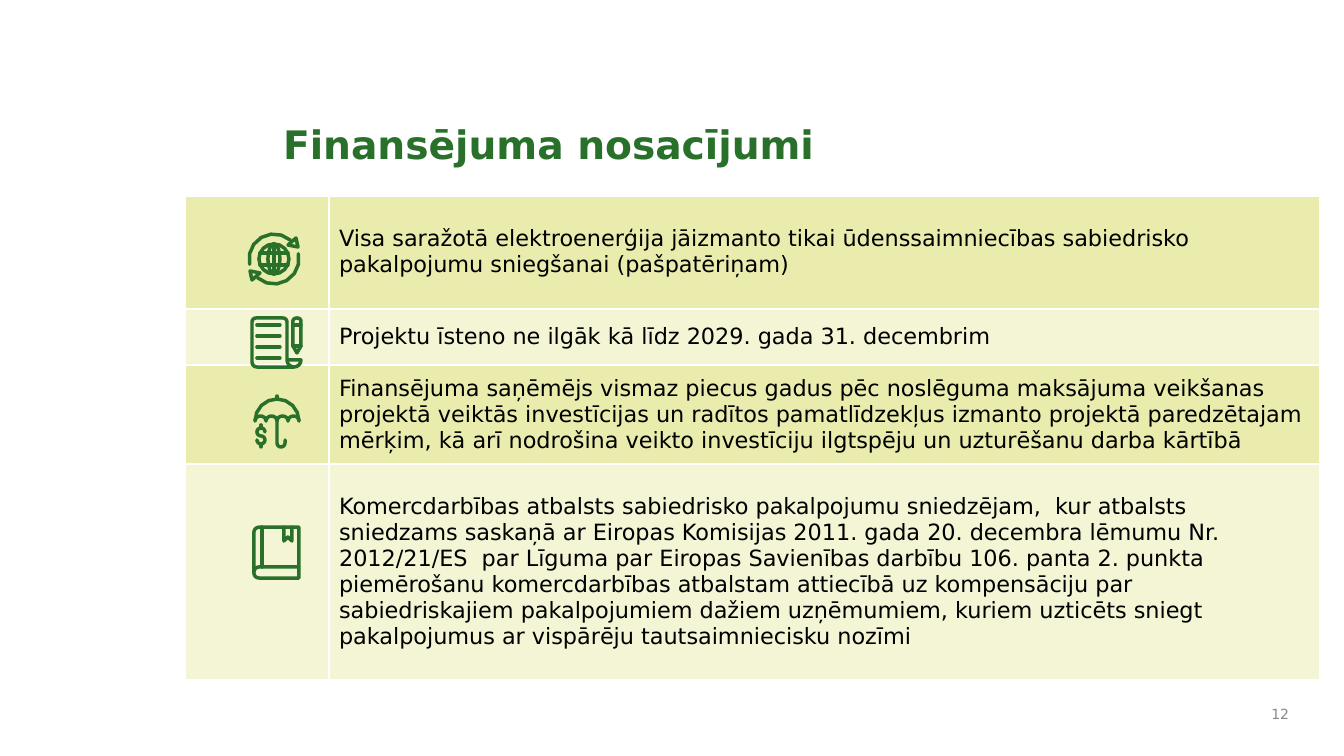
"""Build the slide on funding conditions with its icon table."""
import math

from lxml import etree
from pptx import Presentation
from pptx.dml.color import RGBColor
from pptx.enum.text import MSO_ANCHOR, PP_ALIGN
from pptx.oxml.ns import qn
from pptx.util import Emu, Pt

MIDDLE = MSO_ANCHOR.MIDDLE
LEFT, RIGHT = PP_ALIGN.LEFT, PP_ALIGN.RIGHT
SCALE = 914400 / 100.8
FONT = "DejaVu Sans"
COLORS = {"green": "29702A", "lime": "EAECAD", "black": "000000",
          "grey": "898989", "white": "FFFFFF"}
ROWS = [
    (114, "Visa saražotā elektroenerģija jāizmanto tikai ūdenssaimniecības "
          "sabiedrisko pakalpojumu sniegšanai (pašpatēriņam)"),
    (56, "Projektu īsteno ne ilgāk kā līdz 2029. gada 31. decembrim"),
    (99, "Finansējuma saņēmējs vismaz piecus gadus pēc noslēguma maksājuma "
         "veikšanas projektā veiktās investīcijas un radītos pamatlīdzekļus "
         "izmanto projektā paredzētajam mērķim, kā arī nodrošina veikto "
         "investīciju ilgtspēju un uzturēšanu darba kārtībā"),
    (216, "Komercdarbības atbalsts sabiedrisko pakalpojumu sniedzējam,  kur "
          "atbalsts sniedzams saskaņā ar Eiropas Komisijas 2011. gada 20. "
          "decembra lēmumu Nr. 2012/21/ES  par Līguma par Eiropas Savienības "
          "darbību 106. panta 2. punkta piemērošanu komercdarbības atbalstam "
          "attiecībā uz kompensāciju par sabiedriskajiem pakalpojumiem dažiem "
          "uzņēmumiem, kuriem uzticēts sniegt pakalpojumus ar vispārēju "
          "tautsaimniecisku nozīmi"),
]


def px(value):
    return Emu(round(value * SCALE))


def color(name):
    return RGBColor.from_string(COLORS[name])


def write(tf, text, size, name, align=LEFT, bold=False):
    tf.text = text
    tf.word_wrap = True
    tf.vertical_anchor = MIDDLE
    p = tf.paragraphs[0]
    p.alignment = align
    font = p.runs[0].font
    font.name, font.size, font.bold = FONT, Pt(size), bold
    font.color.rgb = color(name)


def arc(cx, cy, rx, ry, start, end):
    steps = max(3, abs(end - start) // 22)
    angles = [math.radians(start + (end - start) * i / steps)
              for i in range(steps + 1)]
    return [(cx + rx * math.cos(a), cy + ry * math.sin(a)) for a in angles]


def draw_strokes(shapes, *strokes):
    builder = None
    for stroke in strokes:
        points = [(px(x), px(y)) for x, y in stroke]
        if builder is None:
            builder = shapes.build_freeform(*points[0])
        else:
            builder.move_to(*points[0])
        builder.add_line_segments(points[1:], close=False)
    shape = builder.convert_to_shape()
    shape.shadow.inherit = False
    shape.fill.background()
    shape.line.color.rgb = color("green")
    shape.line.width = Pt(2.5)
    shape._element.spPr.get_or_add_ln().set("cap", "rnd")


def draw_globe(shapes):
    cx, cy = 274, 259
    for side, start in ((1, 168), (-1, 348)):
        head = [(22, -21), (24, -12), (14, -14), (22, -21)]
        draw_strokes(shapes, arc(cx, cy, 25, 25, start, start + 143),
                     [(cx + side * x, cy + side * y) for x, y in head])
    parallels = [[(cx - 14, cy + dy), (cx + 14, cy + dy)] for dy in (-6, 6)]
    draw_strokes(shapes, arc(cx, cy, 15, 15, 0, 360), arc(cx, cy, 6, 15, 0, 360),
                 [(cx, cy - 15), (cx, cy + 15)], *parallels)


def draw_scroll(shapes):
    draw_strokes(shapes, [(287, 360)] + arc(283, 322, 4, 4, 0, -90)
                 + arc(256, 322, 4, 4, 270, 180) + arc(257, 362, 5, 5, 180, 90)
                 + arc(294, 360, 7, 7, 90, 0) + arc(294, 360, 7, 7, 180, 90))
    for i in range(4):
        y = 325 + 11 * i
        draw_strokes(shapes, [(257, y), (280, y)])
    bands = [[(293, y), (301, y)] for y in (325, 346)]
    draw_strokes(shapes, [(293, 346)] + arc(297, 321, 4, 3, 180, 360)
                 + [(301, 346), (297, 353), (293, 346)], *bands)


def draw_umbrella(shapes):
    ends = [[(261, y), (261, y + 3)] for y in (425, 444)]
    draw_strokes(shapes, arc(261, 432, 4, 4, 0, -270)
                 + arc(261, 440, 4, 4, -90, 180), *ends)
    scallops = [arc(260.5 + 11 * i, 421, 5.5, 5, 180, 360) for i in range(4)]
    handle = [(277, 421)] + arc(281, 443, 4, 4, 180, 0) + [(285, 440)]
    draw_strokes(shapes, arc(277, 421, 22, 22, 180, 360), *scallops,
                 [(277, 396), (277, 399)], handle)


def draw_book(shapes):
    cover = ([(299, 567), (299, 527)] + arc(260, 532, 6, 5, 270, 180)
             + arc(259, 573, 5, 5, 180, 90) + [(299, 578), (299, 567)]
             + arc(259, 572, 5, 5, 270, 180))
    ribbon = [(284, 527), (284, 541), (288, 537), (292, 541), (292, 527)]
    draw_strokes(shapes, cover, [(262, 527), (262, 567)], ribbon)


def style_cell(cell, top_width, half):
    tcPr = cell._tc.get_or_add_tcPr()
    for side in "LRTB":
        width = top_width if side == "T" else 1
        ln = etree.SubElement(tcPr, qn(f"a:ln{side}"), w=str(Pt(width)))
        fill = etree.SubElement(ln, qn("a:solidFill"))
        etree.SubElement(fill, qn("a:srgbClr"), val=COLORS["white"])
    cell.fill.solid()
    cell.fill.fore_color.rgb = color("lime")
    if half:
        rgb = tcPr.find(qn("a:solidFill")).find(qn("a:srgbClr"))
        etree.SubElement(rgb, qn("a:alpha"), val="50000")


def add_conditions(s):
    height = sum(h for h, _ in ROWS)
    frame = s.shapes.add_table(len(ROWS), 2, px(185), px(195), px(1135), px(height))
    table = frame.table
    table.first_row = table.horz_banding = False
    for column, width in zip(table.columns, (144, 991)):
        column.width = px(width)
    for i, (row_height, text) in enumerate(ROWS):
        table.rows[i].height = px(row_height)
        for cell in table.rows[i].cells:
            style_cell(cell, 1 if i else 3, i % 2 == 1)
        cell = table.cell(i, 1)
        write(cell.text_frame, text, 16, "black")
        cell.vertical_anchor = MIDDLE


def main():
    prs = Presentation()
    prs.slide_width, prs.slide_height = px(1344), px(756)
    s = prs.slides.add_slide(prs.slide_layouts[5])
    title = s.shapes.title
    title.left, title.top, title.width, title.height = map(px, (273, 87, 896, 114))
    write(title.text_frame, "Finansējuma nosacījumi", 28, "green", bold=True)
    number = s.shapes.add_textbox(px(1255), px(697), px(44), px(33))
    write(number.text_frame, "12", 10, "grey", RIGHT)
    add_conditions(s)
    for draw in (draw_umbrella, draw_book, draw_globe, draw_scroll):
        draw(s.shapes)
    prs.save("out.pptx")


if __name__ == "__main__":
    main()
